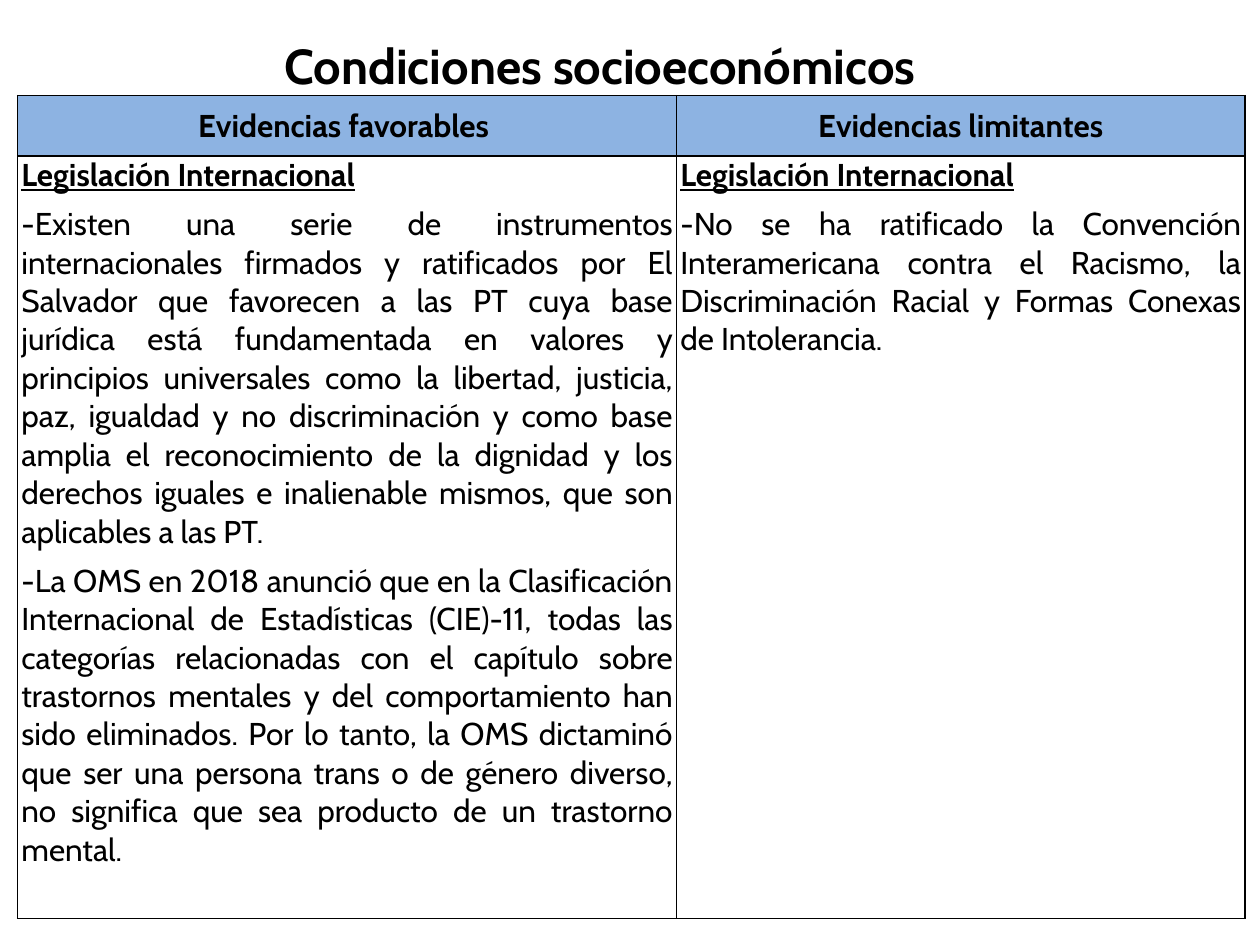
from dataclasses import dataclass

from lxml.etree import SubElement
from pptx import Presentation
from pptx.dml.color import RGBColor
from pptx.enum.text import MSO_ANCHOR, MSO_AUTO_SIZE, PP_ALIGN
from pptx.oxml.ns import qn
from pptx.slide import Slide
from pptx.table import _Cell
from pptx.text.text import _Paragraph
from pptx.util import Inches, Pt

BLACK = RGBColor(0x00, 0x00, 0x00)
HEADER_BLUE = RGBColor(0x8D, 0xB3, 0xE2)
FONT_NAME = "Cabin"
BODY_SIZE = 18
TITLE_SIZE = 28
BORDER_WIDTH = Pt(1)
SIDE_MARGIN = Inches(0.03)
ROW_HEIGHTS = (0.48, 6.05)


@dataclass(frozen=True)
class EvidenceColumn:
    heading: str
    width: float
    subject: str
    findings: tuple[str, ...]


COLUMNS = (
    EvidenceColumn(
        "Evidencias favorables ",
        5.23,
        "Legislación Internacional",
        (
            "-Existen una serie de instrumentos internacionales firmados y ratificados "
            "por El Salvador que favorecen a las PT cuya base jurídica está fundamentada "
            "en valores y principios universales como la libertad, justicia, paz, igualdad "
            "y no discriminación y como base amplia el reconocimiento de la dignidad y los "
            "derechos iguales e inalienable mismos, que son aplicables a las PT. ",
            "-La OMS en 2018 anunció que en la Clasificación Internacional de Estadísticas "
            "(CIE)-11, todas las categorías relacionadas con el capítulo sobre trastornos "
            "mentales y del comportamiento han sido eliminados. Por lo tanto, la OMS "
            "dictaminó que ser una persona trans o de género diverso, no significa que sea "
            "producto de un trastorno mental.",
        ),
    ),
    EvidenceColumn(
        "Evidencias limitantes",
        4.51,
        "Legislación Internacional",
        (
            "-No se ha ratificado la Convención Interamericana contra el Racismo, la "
            "Discriminación Racial y Formas Conexas de Intolerancia.",
        ),
    ),
)


def write(para: _Paragraph, text: str, align: PP_ALIGN, size: int = BODY_SIZE,
          bold: bool = False, underline: bool = False) -> None:
    para.text = text
    para.alignment = align
    for span in para.runs:
        span.font.name = FONT_NAME
        span.font.size = Pt(size)
        span.font.bold = bold
        span.font.underline = underline
        span.font.color.rgb = BLACK


def add_borders(cell: _Cell) -> None:
    properties = cell._tc.get_or_add_tcPr()
    for position, side in enumerate(("lnL", "lnR", "lnT", "lnB")):
        line = SubElement(properties, qn(f"a:{side}"), w=str(BORDER_WIDTH))
        fill = SubElement(line, qn("a:solidFill"))
        SubElement(fill, qn("a:srgbClr"), val=str(BLACK))
        properties.insert(position, line)


def prepare_cell(cell: _Cell) -> None:
    cell.margin_left = cell.margin_right = SIDE_MARGIN
    cell.margin_top = cell.margin_bottom = 0
    add_borders(cell)


def fill_heading(cell: _Cell, column: EvidenceColumn) -> None:
    prepare_cell(cell)
    cell.vertical_anchor = MSO_ANCHOR.MIDDLE
    cell.fill.solid()
    cell.fill.fore_color.rgb = HEADER_BLUE
    write(cell.text_frame.paragraphs[0], column.heading, PP_ALIGN.CENTER, bold=True)


def fill_evidence(cell: _Cell, column: EvidenceColumn) -> None:
    prepare_cell(cell)
    cell.fill.background()
    frame = cell.text_frame
    write(frame.paragraphs[0], column.subject, PP_ALIGN.LEFT, bold=True, underline=True)
    for finding in column.findings:
        write(frame.add_paragraph(), finding, PP_ALIGN.JUSTIFY)
    for para in frame.paragraphs:
        para.space_before = Pt(6)


def add_evidence_table(page: Slide) -> None:
    width = sum(column.width for column in COLUMNS)
    table = page.shapes.add_table(
        len(ROW_HEIGHTS), len(COLUMNS), Inches(0.14), Inches(0.76),
        Inches(width), Inches(sum(ROW_HEIGHTS)),
    ).table
    table.horz_banding = False
    for row, height in zip(table.rows, ROW_HEIGHTS):
        row.height = Inches(height)
    for index, column in enumerate(COLUMNS):
        table.columns[index].width = Inches(column.width)
        fill_heading(table.cell(0, index), column)
        fill_evidence(table.cell(1, index), column)


def add_title(page: Slide) -> None:
    box = page.shapes.add_textbox(Inches(0.12), Inches(0.23), Inches(9.37), Inches(0.57))
    frame = box.text_frame
    frame.word_wrap = True
    frame.auto_size = MSO_AUTO_SIZE.SHAPE_TO_FIT_TEXT
    write(frame.paragraphs[0], "Condiciones socioeconómicos ", PP_ALIGN.CENTER,
          size=TITLE_SIZE, bold=True)


def main() -> None:
    deck = Presentation()
    deck.slide_width = Inches(10)
    deck.slide_height = Inches(7.5)
    page = deck.slides.add_slide(deck.slide_layouts[6])
    add_evidence_table(page)
    add_title(page)
    deck.save("out.pptx")


if __name__ == "__main__":
    main()
